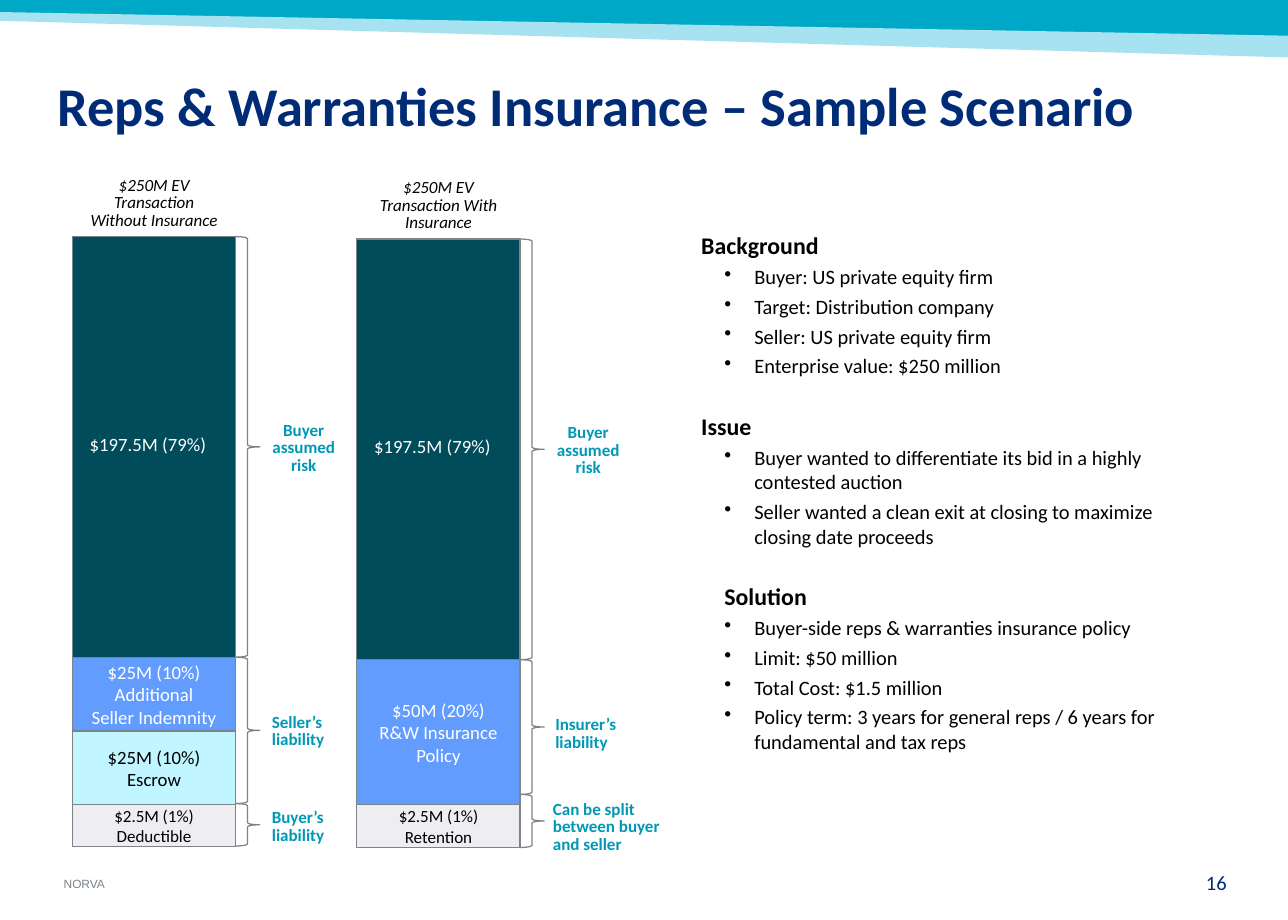
"""Build the reps and warranties sample scenario slide."""
import pptx
import pptx.util
import pptx.dml.color
import pptx.enum.shapes
import pptx.enum.text
import pptx.oxml
import pptx.oxml.ns

Cm = pptx.util.Cm
Pt = pptx.util.Pt
RGB = pptx.dml.color.RGBColor.from_string
Kind = pptx.enum.shapes.MSO_SHAPE
Align = pptx.enum.text.PP_ALIGN
Anchor = pptx.enum.text.MSO_ANCHOR

hues = {
    "teal": "00A8C8", "pale": "A6E2EF", "navy": "002C77", "grey": "7C848A",
    "deep": "004C5A", "blue": "639CFF", "ice": "C1F5FF", "mist": "EEEEF2",
    "label": "0098B5", "white": "FFFFFF", "black": "000000",
}

deck = pptx.Presentation()
deck.slide_width, deck.slide_height = Cm(26.67), Cm(19.05)
slide = deck.slides.add_slide(deck.slide_layouts[6])
shapes = slide.shapes


def write(shape, text, size, hue, bold=False, italic=False, align=Align.LEFT,
          space=None, inset=None, wrap=True, anchor=Anchor.TOP, font="Calibri"):
    frame = shape.text_frame
    frame.text = text
    frame.word_wrap = wrap
    frame.vertical_anchor = anchor
    if inset is not None:
        frame.margin_left = frame.margin_top = Cm(0)
        frame.margin_right, frame.margin_bottom = Cm(inset), Cm(inset / 2)
    for para in frame.paragraphs:
        para.alignment = align
        para.line_spacing = space
        for run in para.runs:
            run.font.name, run.font.size = font, Pt(size)
            run.font.bold, run.font.italic = bold, italic
            run.font.color.rgb = RGB(hues[hue])


def draw(kind, left, top, width, height, fill=None):
    shape = shapes.add_shape(kind, Cm(left), Cm(top), Cm(width), Cm(height))
    shape.shadow.inherit = False
    shape.line.color.rgb = RGB(hues["grey"])
    shape.line.width = Pt(0.75)
    if fill:
        shape.fill.solid()
        shape.fill.fore_color.rgb = RGB(hues[fill])
    else:
        shape.fill.background()
    return shape


bands = [
    ("teal", [(0, 0), (26.67, 0), (26.67, 0.81), (0, 0.3)]),
    ("pale", [(0, 0.25), (26.67, 0.74), (26.67, 1.19), (0, 0.43)]),
]
for hue, points in bands:
    spots = [(Cm(x), Cm(y)) for x, y in points]
    pen = shapes.build_freeform(*spots[0])
    pen.add_line_segments(spots[1:], close=True)
    band = pen.convert_to_shape()
    band.shadow.inherit = False
    band.fill.solid()
    band.fill.fore_color.rgb = RGB(hues[hue])
    band.line.fill.background()

title = shapes.add_textbox(Cm(0.94), Cm(1.52), Cm(24.13), Cm(1.52))
write(title, "Reps & Warranties Insurance – Sample Scenario", 32, "navy",
      bold=True, space=0.83, anchor=Anchor.MIDDLE)
footer = shapes.add_textbox(Cm(1.32), Cm(18.16), Cm(8.03), Cm(0.28))
write(footer, "NORVA", 7, "grey", inset=0, anchor=Anchor.BOTTOM, font="Arial")
number = shapes.add_textbox(Cm(24.16), Cm(18.01), Cm(1.24), Cm(0.51))
write(number, "16", 12, "navy", align=Align.RIGHT, inset=0)

risk = ("$197.5M (79%)", 8.71, "deep", "white", 11)
stacks = [
    (1.5, 4.9, "$250M EV Transaction Without Insurance",
     [risk,
      ("$25M (10%)\nAdditional\nSeller Indemnity", 1.53, "blue", "white", 11),
      ("$25M (10%)\nEscrow", 1.52, "ice", "black", 11),
      ("$2.5M (1%)\nDeductible", 0.87, "mist", "black", 10)],
     [8.71, 3.03, 0.88]),
    (7.39, 4.95, "$250M EV Transaction With Insurance",
     [risk,
      ("$50M (20%)\nR&W Insurance\nPolicy", 3, "blue", "white", 11),
      ("$2.5M (1%)\nRetention", 0.89, "mist", "black", 10)],
     [8.71, 2.79, 1.1]),
]
for left, top, head, parts, spans in stacks:
    box = shapes.add_textbox(Cm(left), Cm(top - 1.36), Cm(3.38), Cm(1.37))
    write(box, head, 10, "black", italic=True, align=Align.CENTER, space=0.86)
    y = top
    for text, height, fill, ink, size in parts:
        bar = draw(Kind.RECTANGLE, left, y, 3.38, height, fill)
        first = fill == "deep"
        write(bar, text, size, ink, align=Align.CENTER, wrap=False,
              inset=0.25 if first else 0, anchor=Anchor.MIDDLE)
        y += height
    y = top
    for span in spans:
        draw(Kind.RIGHT_BRACE, left + 3.37, y, 0.51, span)
        y += span
    note = shapes.add_textbox(Cm(left + 4.13), Cm(top + 3.84), Cm(1.32), Cm(1.12))
    write(note, "Buyer\nassumed\nrisk", 10, "label", bold=True,
          align=Align.CENTER, space=0.86, inset=0, wrap=False)

notes = [
    ("Seller’s\nliability", 5.38, 14.66, 1.7, 0.99),
    ("Buyer’s\nliability", 5.38, 16.64, 1.63, 0.99),
    ("Insurer’s\nliability", 11.25, 14.71, 1.88, 0.99),
    ("Can be split\nbetween buyer\nand seller", 11.2, 16.46, 2.84, 1.37),
]
for text, left, top, width, height in notes:
    note = shapes.add_textbox(Cm(left), Cm(top), Cm(width), Cm(height))
    write(note, text, 10, "label", bold=True, space=0.86, wrap=False)

topics = {
    "Background": ["Buyer: US private equity firm",
                   "Target: Distribution company",
                   "Seller: US private equity firm",
                   "Enterprise value: $250 million"],
    "Issue": ["Buyer wanted to differentiate its bid in a highly contested auction",
              "Seller wanted a clean exit at closing to maximize closing date proceeds"],
    "Solution": ["Buyer-side reps & warranties insurance policy",
                 "Limit: $50 million",
                 "Total Cost: $1.5 million",
                 "Policy term: 3 years for general reps / 6 years for fundamental and tax reps"],
}
body = shapes.add_textbox(Cm(14.27), Cm(4.65), Cm(10.87), Cm(11.79))
lines = [line for head, points in topics.items() for line in [head, *points]]
write(body, "\n".join(lines), 12, "black")
for para in body.text_frame.paragraphs:
    para.space_after = Pt(3)
    props = para._p.get_or_add_pPr()
    if para.text in topics:
        para.runs[0].font.size = Pt(14)
        para.runs[0].font.bold = True
        if para.text != "Background":
            para.space_before = Pt(16.6)
        if para.text == "Solution":
            props.set("marL", str(Cm(0.48)))
    else:
        props.set("marL", str(Cm(1.1)))
        props.set("indent", str(Cm(-0.62)))
        dot = pptx.oxml.parse_xml(
            f'<a:buChar {pptx.oxml.ns.nsdecls("a")} char="•"/>')
        props.append(dot)

deck.save("out.pptx")
